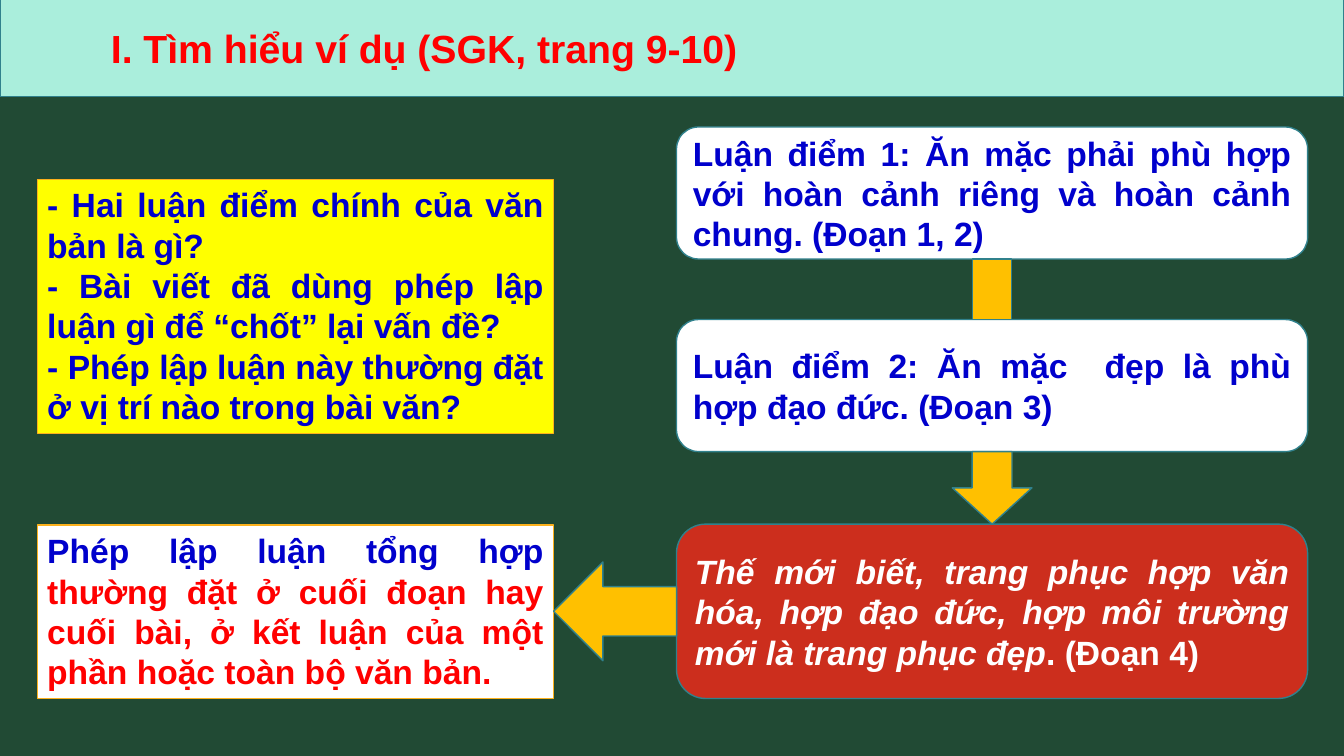
from dataclasses import dataclass

from pptx import Presentation
from pptx.dml.color import RGBColor
from pptx.enum import shapes, text
from pptx.util import Inches, Pt

KIND = shapes.MSO_SHAPE


@dataclass(frozen=True)
class Theme:
    font: str = "Arial"
    head: int = 28
    body: int = 24
    back: str = "214A34"
    band: str = "AAEEDC"
    teal: str = "30818C"
    gold: str = "FFC000"
    amber: str = "FCB11C"
    yellow: str = "FFFF00"
    white: str = "FFFFFF"
    brick: str = "CC2E1D"
    blue: str = "0000CC"
    red: str = "FF0000"


T = Theme()

TITLE = "I. Tìm hiểu ví dụ (SGK, trang 9-10)"

# Each box: top, height, fill, paragraphs; a paragraph is a list of (text, colour, italic)
ASKS = [
    (1.78, 2.52, T.yellow, [
        [("- Hai luận điểm chính của văn bản là gì?", T.blue, False)],
        [("- Bài viết đã dùng phép lập luận gì để “chốt” lại vấn đề?", T.blue, False)],
        [("- Phép lập luận này thường đặt ở vị trí nào trong bài văn?", T.blue, False)],
    ]),
    (5.21, 1.72, T.white, [
        [("Phép lập luận tổng hợp ", T.blue, False),
         ("thường đặt ở cuối đoạn hay cuối bài, ở kết luận của một phần "
          "hoặc toàn bộ văn bản.", T.red, False)],
    ]),
]
POINTS = [
    (1.26, 1.31, T.white, [
        [("Luận điểm 1: Ăn mặc phải phù hợp với hoàn cảnh riêng và hoàn cảnh chung. "
          "(Đoạn 1, 2)", T.blue, False)],
    ]),
    (3.17, 1.31, T.white, [
        [("Luận điểm 2: Ăn mặc  đẹp là phù hợp đạo đức. (Đoạn 3)", T.blue, False)],
    ]),
    (5.2, 1.73, T.brick, [
        [("Thế mới biết, trang phục hợp văn hóa, hợp đạo đức, hợp môi trường mới là "
          "trang phục đẹp", T.white, True),
         (". (Đoạn 4)", T.white, False)],
    ]),
]

WIDE, HIGH = 13.33, 7.5
ASK_X, ASK_W = 0.37, 5.12
POINT_X, POINT_W = 6.71, 6.26
STEM, HEAD, SIDE = 0.39, 0.79, 0.98


def rgb(code):
    return RGBColor.from_string(code)


def paint(shape, fill, line):
    shape.fill.solid()
    shape.fill.fore_color.rgb = rgb(fill)
    shape.line.color.rgb = rgb(line)
    shape.line.width = Pt(1)


def place(slide, kind, box, fill, line):
    shape = slide.shapes.add_shape(kind, *map(Inches, box))
    shape.shadow.inherit = False
    paint(shape, fill, line)
    return shape


def write(shape, paras):
    frame = shape.text_frame
    frame.word_wrap = True
    for i, runs in enumerate(paras):
        para = frame.add_paragraph() if i else frame.paragraphs[0]
        para.alignment = text.PP_ALIGN.JUSTIFY
        para.font.name, para.font.size, para.font.bold = T.font, Pt(T.body), True
        for words, color, slant in runs:
            run = para.add_run()
            run.text = words
            run.font.color.rgb = rgb(color)
            run.font.italic = slant


def add_title(slide):
    title = slide.shapes.title
    title.left, title.top = Inches(0), Inches(-0.02)
    title.width, title.height = Inches(WIDE), Inches(0.98)
    paint(title, T.band, T.teal)
    frame = title.text_frame
    frame.text = TITLE
    frame.auto_size = text.MSO_AUTO_SIZE.NONE
    frame.vertical_anchor = text.MSO_ANCHOR.MIDDLE
    frame.margin_left = Inches(1.1)
    para = frame.paragraphs[0]
    para.alignment = text.PP_ALIGN.LEFT
    font = para.font
    font.name, font.size, font.bold = T.font, Pt(T.head), True
    font.color.rgb = rgb(T.red)


def add_flow(slide):
    """Fill the gaps between the boxes with a bar and two arrows."""
    ends = [top + high for top, high, *_ in POINTS]
    tops = [top for top, *_ in POINTS]
    mid = POINT_X + POINT_W / 2
    links = [(KIND.RECTANGLE, STEM), (KIND.DOWN_ARROW, HEAD)]
    for (kind, wide), end, top in zip(links, ends, tops[1:]):
        place(slide, kind, (mid - wide / 2, end, wide, top - end), T.gold, T.teal)
    left = ASK_X + ASK_W
    level = (tops[-1] + ends[-1]) / 2
    place(slide, KIND.LEFT_ARROW, (left, level - SIDE / 2, POINT_X - left, SIDE),
          T.gold, T.teal)


def main():
    deck = Presentation()
    deck.slide_width, deck.slide_height = Inches(WIDE), Inches(HIGH)
    slide = deck.slides.add_slide(deck.slide_layouts[5])
    slide.background.fill.solid()
    slide.background.fill.fore_color.rgb = rgb(T.back)
    add_title(slide)
    for top, high, fill, paras in ASKS:
        box = place(slide, KIND.RECTANGLE, (ASK_X, top, ASK_W, high), fill, T.amber)
        write(box, paras)
        box.text_frame.vertical_anchor = text.MSO_ANCHOR.TOP
        box.text_frame.auto_size = text.MSO_AUTO_SIZE.SHAPE_TO_FIT_TEXT
    for top, high, fill, paras in POINTS:
        box = place(slide, KIND.ROUNDED_RECTANGLE, (POINT_X, top, POINT_W, high),
                    fill, T.teal)
        write(box, paras)
        box.text_frame.vertical_anchor = text.MSO_ANCHOR.MIDDLE
    add_flow(slide)
    deck.save("out.pptx")


if __name__ == "__main__":
    main()
